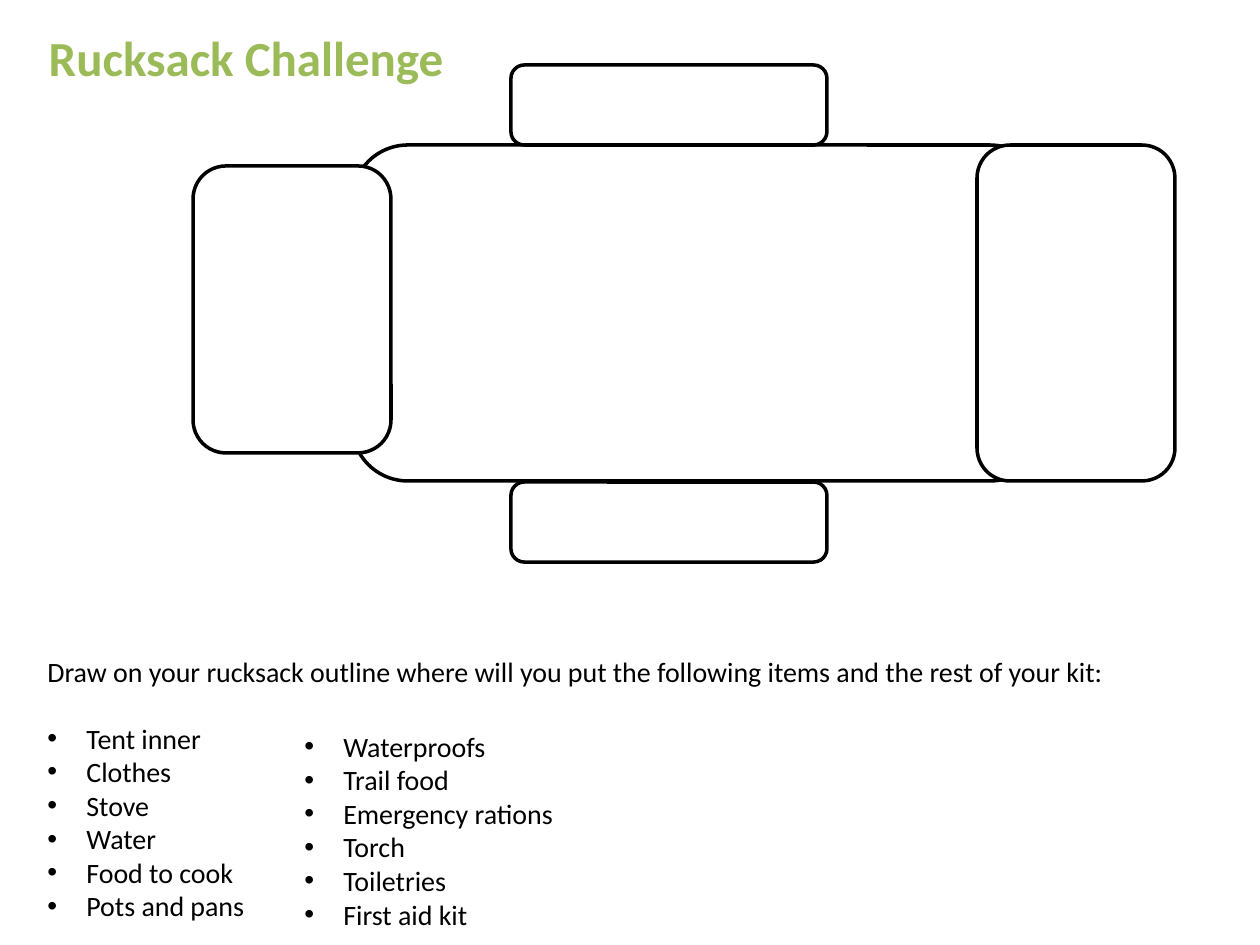
"""Build the Rucksack Challenge worksheet slide."""
import pptx
import pptx.dml.color
import pptx.enum.shapes
import pptx.enum.text
import pptx.oxml.ns
import pptx.util
import lxml.etree

PX = 914400 / 126
COLORS = {"title": "9BBB59", "ink": "000000", "paper": "FFFFFF"}
FONT = "Calibri"
INDENT = 39
INTRO = ("Draw on your rucksack outline where will you put the following items "
         "and the rest of your kit:")
LEFT_ITEMS = ["Tent inner", "Clothes", "Stove", "Water", "Food to cook", "Pots and pans"]
RIGHT_ITEMS = ["Waterproofs", "Trail food", "Emergency rations", "Torch", "Toiletries",
               "First aid kit"]


def emu(px):
    """Turn px into EMU."""
    return pptx.util.Emu(round(px * PX))


def rgb(name):
    """Look up a named colour."""
    return pptx.dml.color.RGBColor.from_string(COLORS[name])


def add_text_frame(s, box):
    """Add a wrapping text box and return its text frame."""
    tf = s.shapes.add_textbox(*map(emu, box)).text_frame
    tf.word_wrap = True
    return tf


def write(p, text, size=16, color="ink", bold=False):
    """Fill a paragraph with text in the slide font."""
    p.text = text
    p.font.name = FONT
    p.font.size = pptx.util.Pt(size)
    p.font.bold = bold
    p.font.color.rgb = rgb(color)


def make_bullet(p):
    """Give a paragraph a hanging round bullet."""
    ppr = p._p.get_or_add_pPr()
    ppr.set("marL", str(emu(INDENT)))
    ppr.set("indent", str(-emu(INDENT)))
    qn = pptx.oxml.ns.qn
    bullet_font = lxml.etree.Element(qn("a:buFont"), typeface="Arial")
    bullet = lxml.etree.Element(qn("a:buChar"), char="•")
    ppr.insert_element_before(bullet_font, "a:buChar", "a:tabLst", "a:defRPr", "a:extLst")
    ppr.insert_element_before(bullet, "a:tabLst", "a:defRPr", "a:extLst")


def add_title(s, box):
    """Place the slide title."""
    p = add_text_frame(s, box).paragraphs[0]
    p.alignment = pptx.enum.text.PP_ALIGN.CENTER
    write(p, "Rucksack Challenge", 28, "title", True)


def add_rucksack(s, box):
    """Draw the rucksack body with its lid, base and side pockets."""
    left, top, width, height = box
    lid_w, body_h, pocket_w, pocket_h = 198, 336, 316, 80
    parts = [
        (159, pocket_h, 694, body_h),
        (width - lid_w, pocket_h, lid_w, body_h),
        (318, height - pocket_h, pocket_w, pocket_h),
        (318, 0, pocket_w, pocket_h),
        (0, 101, lid_w, 287),
    ]
    for x, y, w, h in parts:
        sp = s.shapes.add_shape(pptx.enum.shapes.MSO_SHAPE.ROUNDED_RECTANGLE,
                                *map(emu, (left + x, top + y, w, h)))
        sp.shadow.inherit = False
        sp.fill.solid()
        sp.fill.fore_color.rgb = rgb("paper")
        sp.line.color.rgb = rgb("ink")
        sp.line.width = pptx.util.Pt(2)


def add_kit_list(s, box, items, intro=None):
    """Place a bulleted kit list, below an introduction if one is given."""
    tf = add_text_frame(s, box)
    p = tf.paragraphs[0]
    if intro:
        write(p, intro)
        p.space_after = pptx.util.Pt(19)
        p = tf.add_paragraph()
    for i, item in enumerate(items):
        if i:
            p = tf.add_paragraph()
        write(p, item)
        make_bullet(p)


def main():
    """Assemble and save the slide."""
    prs = pptx.Presentation()
    prs.slide_width, prs.slide_height = emu(1260), emu(945)
    s = prs.slides.add_slide(prs.slide_layouts[6])
    add_title(s, (35, 21, 422, 72))
    add_rucksack(s, (193, 65, 982, 497))
    add_kit_list(s, (35, 648, 1140, 285), LEFT_ITEMS, INTRO)
    add_kit_list(s, (292, 723, 417, 251), RIGHT_ITEMS)
    prs.save("out.pptx")


if __name__ == "__main__":
    main()
